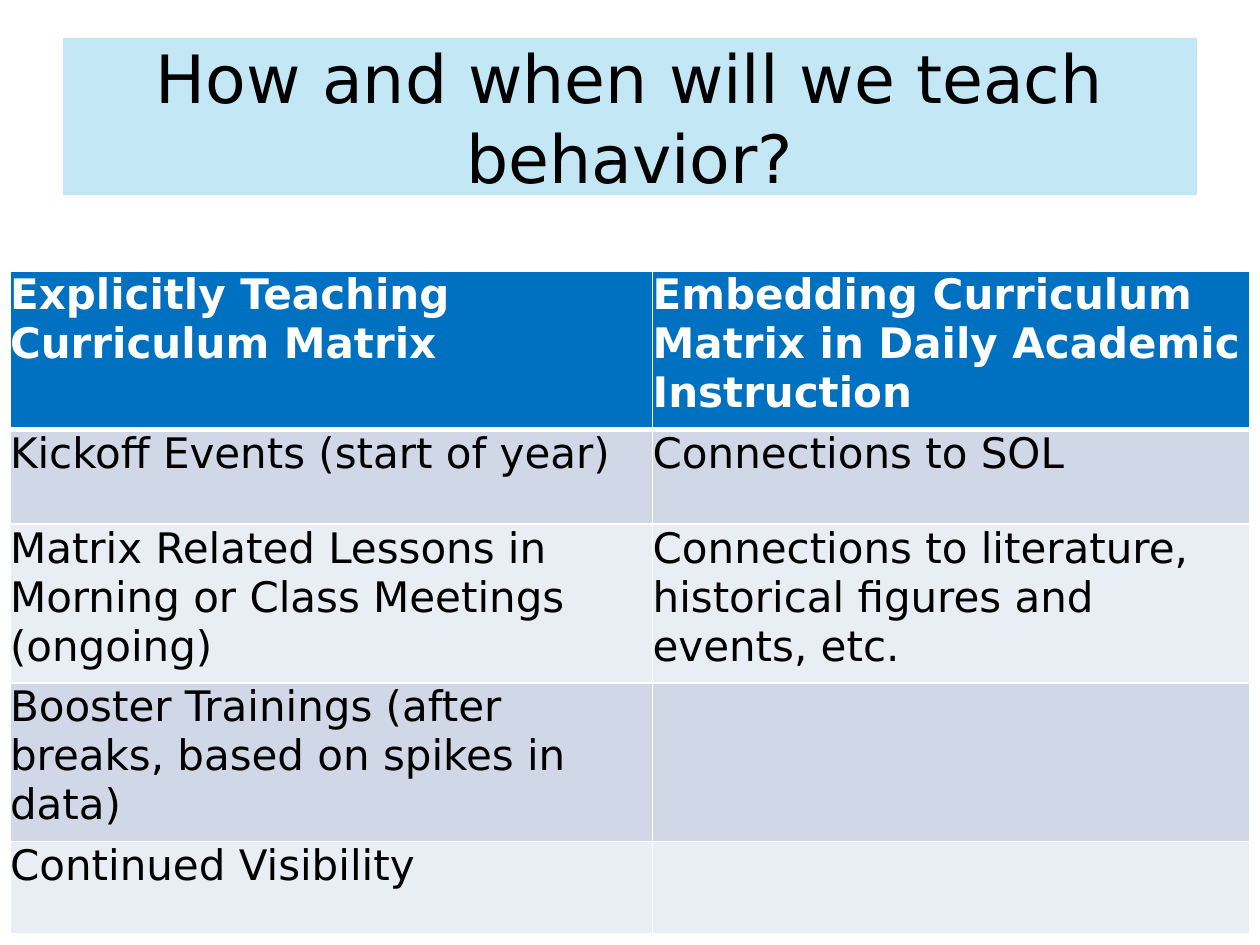
import pptx
import pptx.util
import pptx.dml.color
import pptx.enum.text
import pptx.oxml.ns
import lxml.etree

Pt = pptx.util.Pt
RGBColor = pptx.dml.color.RGBColor
qn = pptx.oxml.ns.qn

FONT = "DejaVu Sans"
BLACK = RGBColor(0x00, 0x00, 0x00)
WHITE = RGBColor(0xFF, 0xFF, 0xFF)
HEADER_BLUE = RGBColor(0x00, 0x70, 0xC0)
BAND_DARK = RGBColor(0xD0, 0xD8, 0xE8)
BAND_LIGHT = RGBColor(0xE9, 0xED, 0xF4)
TITLE_BLUE = RGBColor(0xA9, 0xDC, 0xF2)

COLUMN_WIDTHS = [367.2, 341.28]
ROW_HEIGHTS = [90.72, 54, 90.72, 90.72, 52.56]
ROWS = [
    ("Explicitly Teaching Curriculum Matrix",
     "Embedding Curriculum Matrix in Daily Academic Instruction"),
    ("Kickoff Events (start of year)", "Connections to SOL"),
    ("Matrix Related Lessons in Morning or Class Meetings (ongoing)",
     "Connections to literature, historical figures and events, etc."),
    ("Booster Trainings (after breaks, based on spikes in data)", ""),
    ("Continued Visibility", ""),
]


def add_span(para, text, size, color, bold=False):
    span = para.add_run()
    span.text = text
    span.font.name = FONT
    span.font.size = Pt(size)
    span.font.bold = bold
    span.font.color.rgb = color


def set_borders(cell, widths):
    """Draw white borders; widths maps each side to points."""
    properties = cell._tc.get_or_add_tcPr()
    for position, (side, width) in enumerate(widths.items()):
        line = lxml.etree.Element(qn("a:ln" + side), w=str(Pt(width)))
        fill = lxml.etree.SubElement(line, qn("a:solidFill"))
        lxml.etree.SubElement(fill, qn("a:srgbClr"), val=str(WHITE))
        properties.insert(position, line)


deck = pptx.Presentation()
deck.slide_width = Pt(720)
deck.slide_height = Pt(540)
page = deck.slides.add_slide(deck.slide_layouts[5])

# Title on a translucent band
title = page.shapes.title
title.left, title.top, title.width, title.height = Pt(36), Pt(21.6), Pt(648), Pt(90)
title.fill.solid()
title.fill.fore_color.rgb = TITLE_BLUE
title_color = title._element.spPr.find(".//" + qn("a:srgbClr"))
lxml.etree.SubElement(title_color, qn("a:alpha"), val="68000")
frame = title.text_frame
frame.word_wrap = True
frame.auto_size = pptx.enum.text.MSO_AUTO_SIZE.NONE
frame.vertical_anchor = pptx.enum.text.MSO_ANCHOR.MIDDLE
para = frame.paragraphs[0]
para.alignment = pptx.enum.text.PP_ALIGN.CENTER
add_span(para, "How and when will we teach behavior?", 38, BLACK)

# Table of teaching approaches
table = page.shapes.add_table(
    len(ROWS), len(COLUMN_WIDTHS), Pt(5.76), Pt(154.8),
    Pt(sum(COLUMN_WIDTHS)), Pt(sum(ROW_HEIGHTS))).table
for column, width in zip(table.columns, COLUMN_WIDTHS):
    column.width = Pt(width)

for index, (texts, height) in enumerate(zip(ROWS, ROW_HEIGHTS)):
    table.rows[index].height = Pt(height)
    header = index == 0
    band = HEADER_BLUE if header else BAND_DARK if index % 2 else BAND_LIGHT
    for cell, text in zip(table.rows[index].cells, texts):
        cell.margin_left = cell.margin_right = Pt(0)
        cell.margin_top = cell.margin_bottom = Pt(0)
        cell.fill.solid()
        cell.fill.fore_color.rgb = band
        # A heavier rule separates the header from the body
        set_borders(cell, {"L": 1, "R": 1, "T": 3 if index == 1 else 1,
                           "B": 3 if header else 1})
        if text:
            add_span(cell.text_frame.paragraphs[0], text, 24,
                     WHITE if header else BLACK, header)

deck.save("out.pptx")
